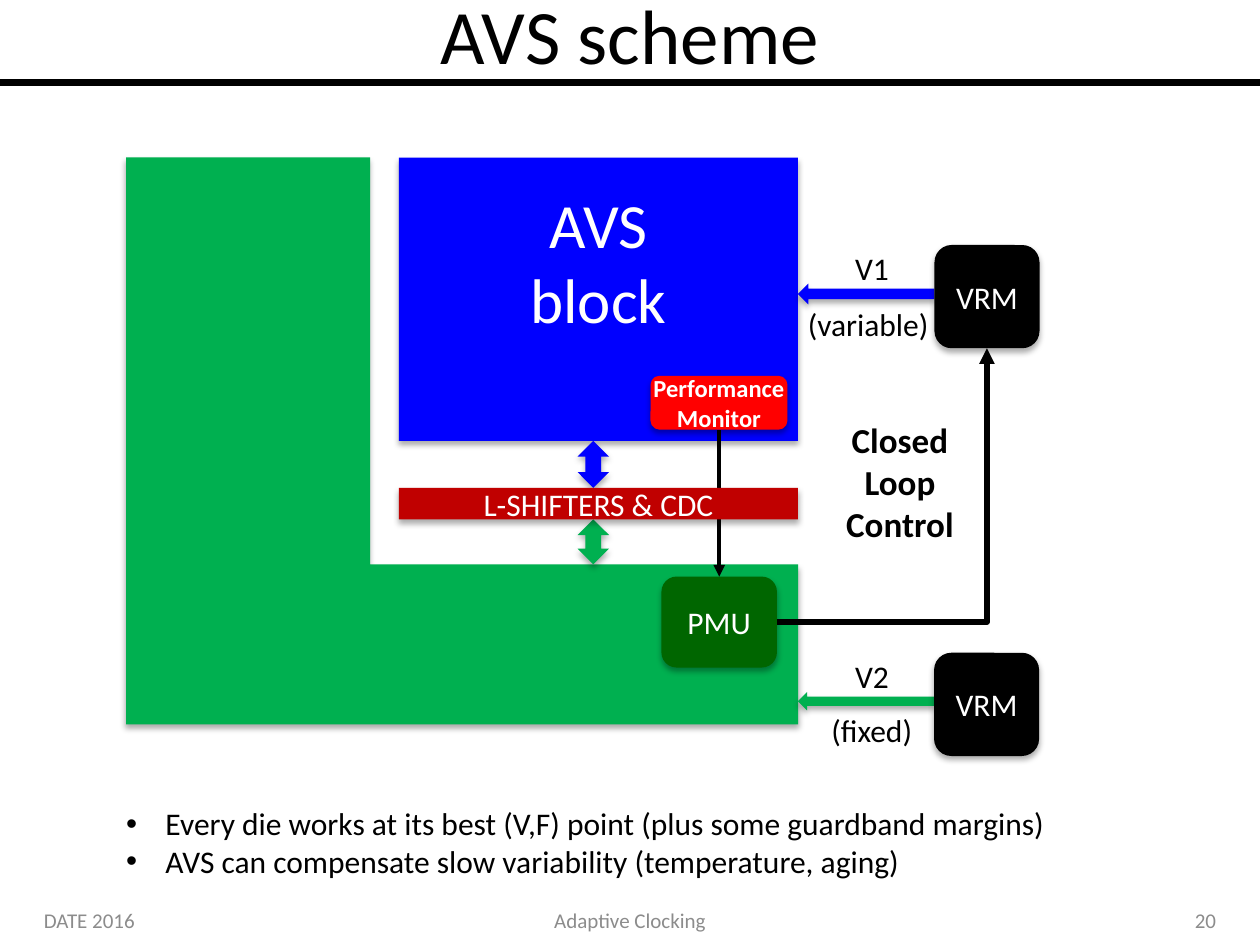
"""Build the slide that explains the adaptive voltage scaling scheme."""
from lxml import etree
from pptx import Presentation
from pptx.dml.color import RGBColor
from pptx.enum.shapes import MSO_CONNECTOR, MSO_SHAPE
from pptx.enum.text import MSO_ANCHOR, PP_ALIGN
from pptx.oxml import parse_xml
from pptx.oxml.ns import qn
from pptx.util import Pt

LEFT, CENTER, RIGHT = PP_ALIGN.LEFT, PP_ALIGN.CENTER, PP_ALIGN.RIGHT
TOP, MIDDLE = MSO_ANCHOR.TOP, MSO_ANCHOR.MIDDLE
STRAIGHT, ELBOW = MSO_CONNECTOR.STRAIGHT, MSO_CONNECTOR.ELBOW
RECT, ROUNDED = MSO_SHAPE.RECTANGLE, MSO_SHAPE.ROUNDED_RECTANGLE
UP_DOWN, LEFT_ARROW = MSO_SHAPE.UP_DOWN_ARROW, MSO_SHAPE.LEFT_ARROW
BLACK, WHITE, GREY = "000000", "FFFFFF", "8C8C8C"
BLUE, GREEN, DARK_GREEN = "0000FF", "00B050", "006600"
RED, DARK_RED = "FF0000", "C00000"
SHADOW = (
    '<a:effectLst xmlns:a="http://schemas.openxmlformats.org/drawingml/2006/main">'
    '<a:outerShdw blurRad="44450" dist="27940" dir="5400000" rotWithShape="0">'
    '<a:srgbClr val="000000"><a:alpha val="32000"/></a:srgbClr>'
    "</a:outerShdw></a:effectLst>"
)


def paint(color_format, hex_color):
    color_format.rgb = RGBColor.from_string(hex_color)


def write(frame, lines, size, color, align=CENTER, bold=False, **frame_format):
    for name, value in frame_format.items():
        setattr(frame, name, value)
    for index, line in enumerate(lines):
        paragraph = frame.add_paragraph() if index else frame.paragraphs[0]
        paragraph.text = line
        paragraph.alignment = align
        for run in paragraph.runs:
            for name, value in {"name": "Calibri", "size": Pt(size), "bold": bold}.items():
                setattr(run.font, name, value)
            paint(run.font.color, color)


prs = Presentation()
prs.slide_width, prs.slide_height = Pt(720), Pt(540)
slide = prs.slides.add_slide(prs.slide_layouts[6])
shapes = slide.shapes

connectors = [
    (STRAIGHT, 0, 47, 720, 47, 4, False),
    (STRAIGHT, 411, 245.5, 411, 329.5, 2.25, True),
    (ELBOW, 444, 355.5, 564, 199, 3, True),
]
always_on_outline = [(211.5, 90), (211.5, 322.5), (456, 322.5), (456, 414), (72, 414)]
back_blocks = [
    (RECT, 228, 90, 228, 162, BLUE, "AVS\vblock", 36, {"margin_bottom": Pt(47.5)}),
    (UP_DOWN, 330, 252, 18, 26.75, BLUE, "", 18, {}),
    (UP_DOWN, 330, 296.75, 18, 25.75, GREEN, "", 18, {}),
    (LEFT_ARROW, 456, 162, 78, 12, BLUE, "", 18, {}),
    (ROUNDED, 534, 140, 60, 59, BLACK, "VRM", 18, {}),
    (LEFT_ARROW, 456, 395.5, 78, 10.5, GREEN, "", 18, {}),
    (ROUNDED, 533.75, 373, 60, 59, BLACK, "VRM", 18, {}),
    (ROUNDED, 378, 329.5, 66, 52, DARK_GREEN, "PMU", 18, {}),
]
front_blocks = [
    (RECT, 228, 278.75, 228, 18, DARK_RED, "L-SHIFTERS & CDC", 18, {}),
    (ROUNDED, 371.75, 214.75, 78.25, 30.75, RED, "Performance\vMonitor", 14,
     {"bold": True, "margin_left": 0, "margin_right": 0}),
]

outline = shapes.build_freeform(Pt(72), Pt(90))
outline.add_line_segments([(Pt(x), Pt(y)) for x, y in always_on_outline])
always_on = outline.convert_to_shape()
always_on.fill.solid()
paint(always_on.fill.fore_color, GREEN)
always_on.line.fill.background()
always_on._element.spPr.append(parse_xml(SHADOW))

for part in back_blocks + connectors + front_blocks:
    if part in connectors:
        route, x1, y1, x2, y2, weight, has_arrow = part
        link = shapes.add_connector(route, Pt(x1), Pt(y1), Pt(x2), Pt(y2))
        properties = link._element.spPr
        link.line.width = Pt(weight)
        paint(link.line.color, BLACK)
        if has_arrow:
            etree.SubElement(properties.find(qn("a:ln")), qn("a:tailEnd"), type="triangle")
        if route == ELBOW:
            properties.find(qn("a:prstGeom")).set("prst", "bentConnector2")
        etree.SubElement(properties, qn("a:effectLst"))
        continue
    preset, left, top, width, height, fill, label, size, label_format = part
    block = shapes.add_shape(preset, Pt(left), Pt(top), Pt(width), Pt(height))
    block.fill.solid()
    paint(block.fill.fore_color, fill)
    block.line.fill.background()
    block._element.spPr.append(parse_xml(SHADOW))
    write(block.text_frame, [label], size, WHITE,
          vertical_anchor=MIDDLE, word_wrap=True, **label_format)

labels = [
    (36, -8, 648, 54, "AVS scheme", 44, BLACK, CENTER, MIDDLE, True, False),
    (18, 511.5, 168, 28.5, "DATE 2016", 12, GREY, LEFT, MIDDLE, True, False),
    (246, 511.5, 228, 28.5, "Adaptive Clocking", 12, GREY, CENTER, MIDDLE, True, False),
    (534, 511.5, 168, 28.5, "20", 12, GREY, RIGHT, MIDDLE, True, False),
    (481.5, 139, 34, 29, "V1", 18, BLACK, LEFT, TOP, False, False),
    (481.5, 372, 34, 29, "V2", 18, BLACK, LEFT, TOP, False, False),
    (454.5, 171, 84, 29, "(variable)", 18, BLACK, LEFT, TOP, False, False),
    (468, 402.5, 61, 29, "(fixed)", 18, BLACK, LEFT, TOP, False, False),
    (476, 235.5, 76.5, 80, "Closed\vLoop\vControl", 20, BLACK, CENTER, TOP, False, True),
]
for left, top, width, height, label, size, color, align, anchor, wrap, bold in labels:
    box = shapes.add_textbox(Pt(left), Pt(top), Pt(width), Pt(height))
    write(box.text_frame, [label], size, color, align, bold,
          vertical_anchor=anchor, word_wrap=wrap)

takeaways = shapes.add_textbox(Pt(65), Pt(456), Pt(546), Pt(51))
write(takeaways.text_frame, [
    "Every die works at its best (V,F) point (plus some guardband margins)",
    "AVS can compensate slow variability (temperature, aging)",
], 18, BLACK, LEFT, word_wrap=False)
for paragraph in takeaways.text_frame.paragraphs:
    properties = paragraph._p.get_or_add_pPr()
    properties.set("marL", str(Pt(22.5)))
    properties.set("indent", str(-Pt(22.5)))
    etree.SubElement(properties, qn("a:buFont"), typeface="Arial")
    etree.SubElement(properties, qn("a:buChar"), char="•")

prs.save("out.pptx")
